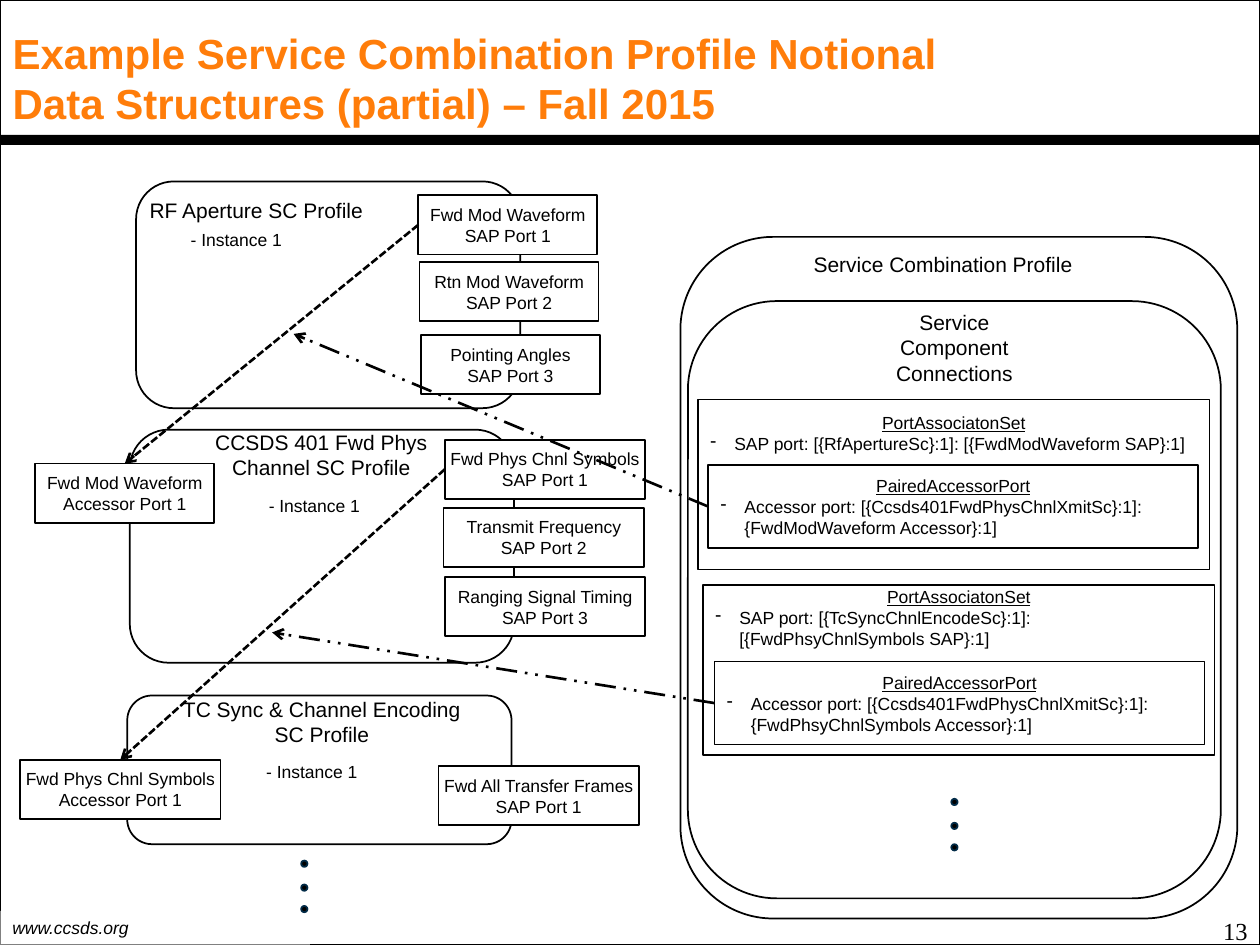
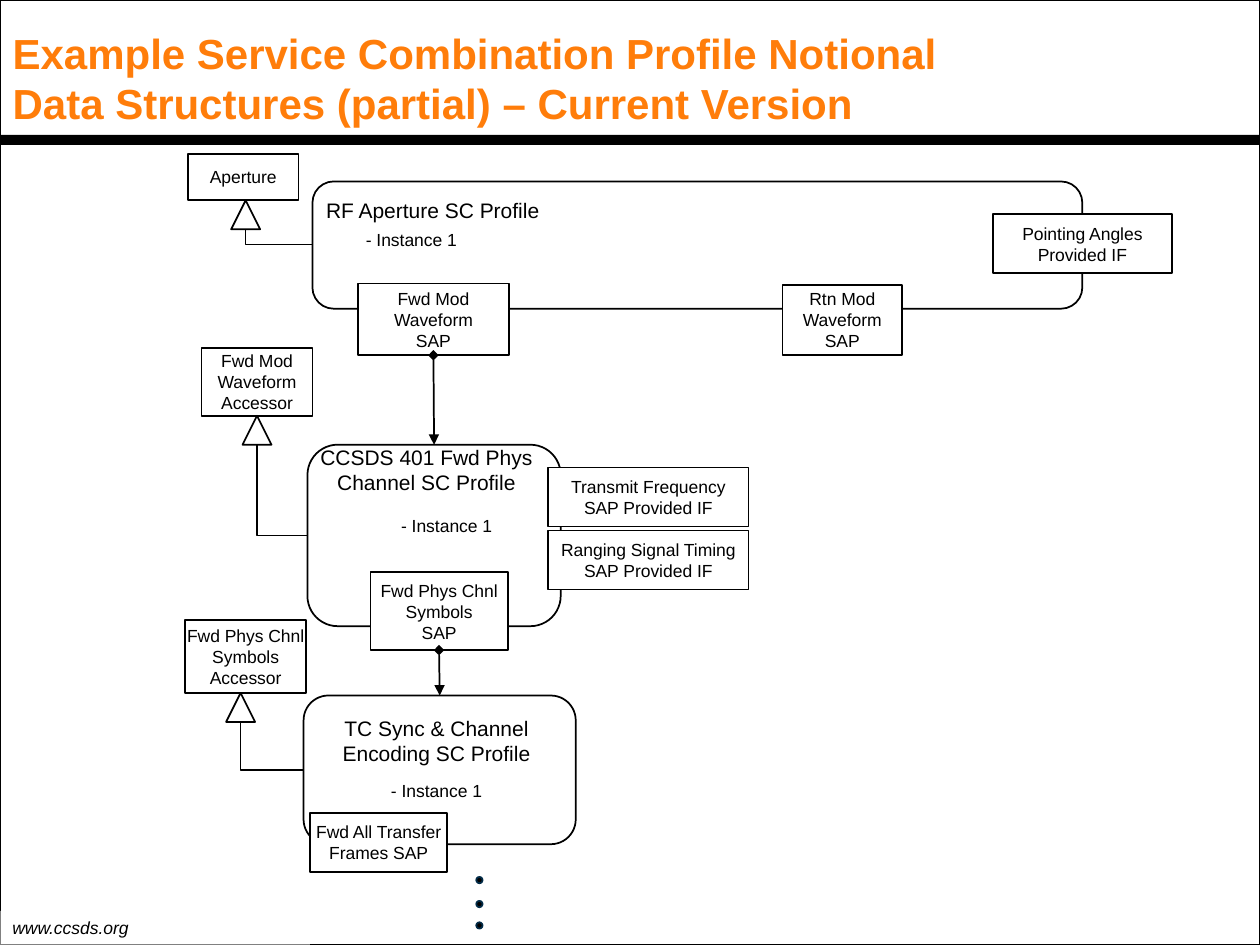
from lxml.etree import SubElement
from pptx import Presentation
from pptx.dml.color import RGBColor
from pptx.enum.dml import MSO_LINE
from pptx.enum.shapes import MSO_CONNECTOR, MSO_SHAPE
from pptx.enum.text import MSO_ANCHOR, MSO_AUTO_SIZE, PP_ALIGN
from pptx.oxml.ns import qn
from pptx.util import Inches, Pt

RECTANGLE, ROUNDED = MSO_SHAPE.RECTANGLE, MSO_SHAPE.ROUNDED_RECTANGLE
OVAL, TRIANGLE = MSO_SHAPE.OVAL, MSO_SHAPE.ISOSCELES_TRIANGLE
STRAIGHT, ELBOW = MSO_CONNECTOR.STRAIGHT, MSO_CONNECTOR.ELBOW
SHORT_DASH, DASH_DOT_DOT = MSO_LINE.SQUARE_DOT, MSO_LINE.DASH_DOT_DOT
LEFT, CENTER, RIGHT = PP_ALIGN.LEFT, PP_ALIGN.CENTER, PP_ALIGN.RIGHT
TOP, MIDDLE = MSO_ANCHOR.TOP, MSO_ANCHOR.MIDDLE
TOP_SIDE, LEFT_SIDE, BOTTOM_SIDE = 0, 1, 2
BLACK, WHITE, ORANGE, NAVY = "000000", "FFFFFF", "FF7D0A", "022B47"
DOT_SIZE = 0.5
DOT_ROWS = (0, 1.9, 3.6)
TRIANGLE_SIZE = 2.3
INSTANCE = "- Instance 1"

deck = Presentation()
deck.slide_width, deck.slide_height = Inches(10), Inches(7.5)
GRID = deck.slide_width / 100


def add_box(page, kind, area, text="", size=10, fill=None, line=None, opacity=100,
            align=CENTER, anchor=MIDDLE, wrap=False, face="Arial"):
    area = [round(length * GRID) for length in area]
    if kind is None:
        box = page.shapes.add_textbox(*area)
    else:
        box = page.shapes.add_shape(kind, *area)
        box.shadow.inherit = False
        if fill:
            box.fill.solid()
            box.fill.fore_color.rgb = RGBColor.from_string(fill)
            color = box.element.spPr.find(qn("a:solidFill"))[0]
            if opacity < 100:
                SubElement(color, qn("a:alpha"), val=str(opacity * 1000))
        else:
            box.fill.background()
        if line:
            box.line.color.rgb = RGBColor.from_string(line)
            box.line.width = Pt(1)
        else:
            box.line.fill.background()
    if text:
        frame = box.text_frame
        frame.text = text
        frame.word_wrap = wrap
        frame.vertical_anchor = anchor
        for para in frame.paragraphs:
            para.alignment = align
            for span in para.runs:
                span.font.name, span.font.size = face, Pt(size)
                span.font.color.rgb = RGBColor.from_string(BLACK)
    return box


def add_link(page, kind, begin, end, width=1, dash=None, head=None, tail=None):
    ends = [round(length * GRID) for length in (*begin, *end)]
    link = page.shapes.add_connector(kind, *ends)
    link.line.color.rgb = RGBColor.from_string(BLACK)
    link.line.width = Pt(width)
    if dash:
        link.line.dash_style = dash
    outline = link.line._get_or_add_ln()
    for tag, tip in (("a:headEnd", head), ("a:tailEnd", tail)):
        if tip:
            SubElement(outline, qn(tag), type=tip)
    SubElement(link.element.spPr, qn("a:effectLst"))
    return link


pages = []
for version in ("Fall 2015", "Current Version"):
    page = deck.slides.add_slide(deck.slide_layouts[5])
    add_box(page, RECTANGLE, (0, 0, 100, 75), line=BLACK)
    footer = add_box(page, RECTANGLE, (0, 72.3, 24.6, 2.7), "www.ccsds.org",
                     fill=WHITE, opacity=50, align=LEFT)
    footer.text_frame.paragraphs[0].runs[0].font.italic = True
    add_box(page, RECTANGLE, (0, 10.7, 100, 0.8), fill=BLACK)
    title = page.shapes.title
    title.left, title.top, title.width, title.height = (
        round(length * GRID) for length in (0, 2.8, 78.4, 6.7))
    frame = title.text_frame
    frame.text = f"Example Service Combination Profile Notional Data Structures (partial) – {version}"
    frame.auto_size = MSO_AUTO_SIZE.NONE
    frame.word_wrap = True
    frame.vertical_anchor = MIDDLE
    para = frame.paragraphs[0]
    para.alignment = LEFT
    font = para.runs[0].font
    font.name, font.size, font.bold = "Arial", Pt(24), True
    font.color.rgb = RGBColor.from_string(ORANGE)
    pages.append(page)

notional, current = pages

add_box(notional, None, (76.7, 72.2, 23.3, 4.7), "13", 14, align=RIGHT, anchor=TOP,
        wrap=True, face="Times New Roman")

for outline in (
    (10.8, 14.4, 30.5, 18),
    (10.3, 34.1, 30.5, 18.5),
    (10.1, 55.2, 30.5, 11.8),
    (54.6, 23.9, 42.3, 47.4),
    (54, 18.8, 44.2, 54.1),
):
    add_box(notional, ROUNDED, outline, line=BLACK)

for area, size, text in (
    ((10.8, 15.2, 19.1, 3), 12, "RF Aperture SC Profile"),
    ((14.1, 17.7, 9.3, 2.7), 10, INSTANCE),
    ((11.9, 33.6, 27.2, 5), 12, "CCSDS 401 Fwd Phys\nChannel SC Profile"),
    ((20.3, 38.8, 9.3, 2.7), 10, INSTANCE),
    ((11.7, 54.8, 27.7, 5), 12, "TC Sync & Channel Encoding\nSC Profile"),
    ((20.1, 59.9, 9.3, 2.7), 10, INSTANCE),
    ((63.5, 19.5, 22.7, 3), 12, "Service Combination Profile"),
    ((54.6, 24.1, 42.3, 7), 12, "Service\nComponent\nConnections"),
):
    add_box(notional, None, area, text, size, anchor=TOP)

ports = {}
for name, left, top, width, text in (
    ("waveform", 33.2, 15.5, 14.2, "Fwd Mod Waveform\nSAP Port 1"),
    ("return", 33.3, 20.8, 14.2, "Rtn Mod Waveform\nSAP Port 2"),
    ("angles", 33.4, 26.6, 14.2, "Pointing Angles\nSAP Port 3"),
    ("symbols", 35.3, 34.9, 15.9, "Fwd Phys Chnl Symbols\nSAP Port 1"),
    ("frequency", 35.2, 40.3, 15.9, "Transmit Frequency\nSAP Port 2"),
    ("ranging", 35.3, 45.8, 15.9, "Ranging Signal Timing\nSAP Port 3"),
    ("frames", 34.8, 60.8, 15.9, "Fwd All Transfer Frames\nSAP Port 1"),
    ("waveform accessor", 2.8, 36.8, 14.2, "Fwd Mod Waveform\nAccessor Port 1"),
    ("symbols accessor", 1.6, 60.3, 15.9, "Fwd Phys Chnl Symbols\nAccessor Port 1"),
):
    ports[name] = add_box(notional, RECTANGLE, (left, top, width, 4.7), text,
                          fill=WHITE, line=BLACK)

SET, PAIRED = "PortAssociatonSet", "PairedAccessorPort"
ACCESSOR = "Accessor port: [{Ccsds401FwdPhysChnlXmitSc}:1]:"
for name, area, inset, text in (
    ("waveform set", (55.4, 31.7, 40.6, 13.5), 1,
     f"{SET}\nSAP port: [{{RfApertureSc}}:1]: [{{FwdModWaveform SAP}}:1]"),
    ("waveform pair", (56.2, 36.9, 38.9, 6.6), 0.8,
     f"{PAIRED}\n{ACCESSOR}\v{{FwdModWaveform Accessor}}:1]"),
    ("symbols set", (55.8, 46.4, 40.6, 13.5), 0.1,
     f"{SET}\nSAP port: [{{TcSyncChnlEncodeSc}}:1]:\v[{{FwdPhsyChnlSymbols SAP}}:1]"),
    ("symbols pair", (56.7, 52.5, 38.9, 6.6), 0.8,
     f"{PAIRED}\n{ACCESSOR}\v{{FwdPhsyChnlSymbols Accessor}}:1]"),
):
    box = add_box(notional, RECTANGLE, area, text, fill=WHITE, line=BLACK, opacity=50,
                  anchor=TOP, wrap=True)
    box.text_frame.margin_top = round(inset * GRID)
    heading, item = box.text_frame.paragraphs
    heading.runs[0].font.underline = True
    item.alignment = LEFT
    properties = item._p.get_or_add_pPr()
    properties.set("marL", str(Inches(0.19)))
    properties.set("indent", str(-Inches(0.19)))
    SubElement(properties, qn("a:buChar"), char="-")
    for line_break in item._p.findall(qn("a:br")):
        SubElement(line_break, qn("a:rPr"), sz="1000")
    ports[name] = box

for name, begin, end, pair_begin, pair_end in (
    ("waveform", (33.2, 17.9), (9.9, 36.8), (56.2, 40.2), (23.3, 26.5)),
    ("symbols", (35.3, 37.2), (9.5, 60.3), (56.7, 55.8), (21.6, 50.2)),
):
    link = add_link(notional, STRAIGHT, begin, end, 1.5, SHORT_DASH, tail="arrow")
    link.begin_connect(ports[name], LEFT_SIDE)
    link.end_connect(ports[f"{name} accessor"], TOP_SIDE)
    link = add_link(notional, STRAIGHT, pair_begin, pair_end, 1.5, DASH_DOT_DOT, tail="arrow")
    link.begin_connect(ports[f"{name} pair"], LEFT_SIDE)

profiles = {}
for name, area in (
    ("aperture", (24.8, 14.4, 61.1, 10.1)),
    ("channel", (24.4, 35.3, 20.1, 14.4)),
    ("encoding", (24.1, 55.2, 21.6, 11.8)),
):
    profiles[name] = add_box(current, ROUNDED, area, line=BLACK)

for area, size, text in (
    ((24.8, 15.2, 19.1, 3), 12, "RF Aperture SC Profile"),
    ((28, 17.7, 9.3, 2.7), 10, INSTANCE),
    ((23.8, 34.8, 20.1, 5), 12, "CCSDS 401 Fwd Phys\nChannel SC Profile"),
    ((30.8, 40.4, 9.3, 2.7), 10, INSTANCE),
    ((25.4, 56.3, 18.5, 5), 12, "TC Sync & Channel\nEncoding SC Profile"),
    ((30, 61.4, 9.3, 2.7), 10, INSTANCE),
):
    add_box(current, None, area, text, size, anchor=TOP)

interfaces = {}
for name, area, text in (
    ("aperture", (14.9, 12.2, 8.8, 3.7), "Aperture"),
    ("waveform", (28.4, 22.5, 12, 5.7), "Fwd Mod\nWaveform\nSAP"),
    ("return", (62.1, 22.6, 9.5, 5.6), "Rtn Mod\nWaveform\nSAP"),
    ("angles", (78.8, 17, 14.2, 4.7), "Pointing Angles\nProvided IF"),
    ("waveform accessor", (16, 27.6, 8.8, 5.4), "Fwd Mod\nWaveform\nAccessor"),
    ("frequency", (43.5, 37.1, 15.9, 4.7), "Transmit Frequency\nSAP Provided IF"),
    ("ranging", (43.5, 42.1, 15.9, 4.7), "Ranging Signal Timing\nSAP Provided IF"),
    ("symbols", (29.4, 45.4, 10.9, 6.2), "Fwd Phys Chnl\nSymbols\nSAP"),
    ("symbols accessor", (14.7, 49.2, 9.6, 5.8), "Fwd Phys Chnl\nSymbols\nAccessor"),
    ("frames", (24.6, 64.5, 10.9, 4.7), "Fwd All Transfer\nFrames SAP"),
):
    interfaces[name] = add_box(current, RECTANGLE, area, text, fill=WHITE, line=BLACK)

for begin, peak in (
    ((24.8, 19.4), (19.5, 15.9)),
    ((24.4, 42.5), (20.4, 33)),
    ((24.1, 61.1), (19.1, 55)),
):
    link = add_link(current, ELBOW, begin, (peak[0], peak[1] + TRIANGLE_SIZE))
    link.element.spPr.find(qn("a:prstGeom")).set("prst", "bentConnector2")
    add_box(current, TRIANGLE, (peak[0] - TRIANGLE_SIZE / 2, peak[1], TRIANGLE_SIZE, TRIANGLE_SIZE),
            fill=WHITE, line=BLACK, opacity=50)

for interface, profile, begin, end in (
    ("waveform", "channel", (34.4, 28.2), (34.4, 35.3)),
    ("symbols", "encoding", (34.8, 51.6), (34.9, 55.2)),
):
    link = add_link(current, STRAIGHT, begin, end, head="diamond", tail="triangle")
    link.begin_connect(interfaces[interface], BOTTOM_SIDE)
    link.end_connect(profiles[profile], TOP_SIDE)

for page, left, top in ((notional, 23.9, 68.3), (notional, 75.5, 63.4), (current, 37.8, 69.6)):
    for row in DOT_ROWS:
        add_box(page, OVAL, (left, top + row, DOT_SIZE, DOT_SIZE), fill=BLACK, line=NAVY)

deck.save("out.pptx")
